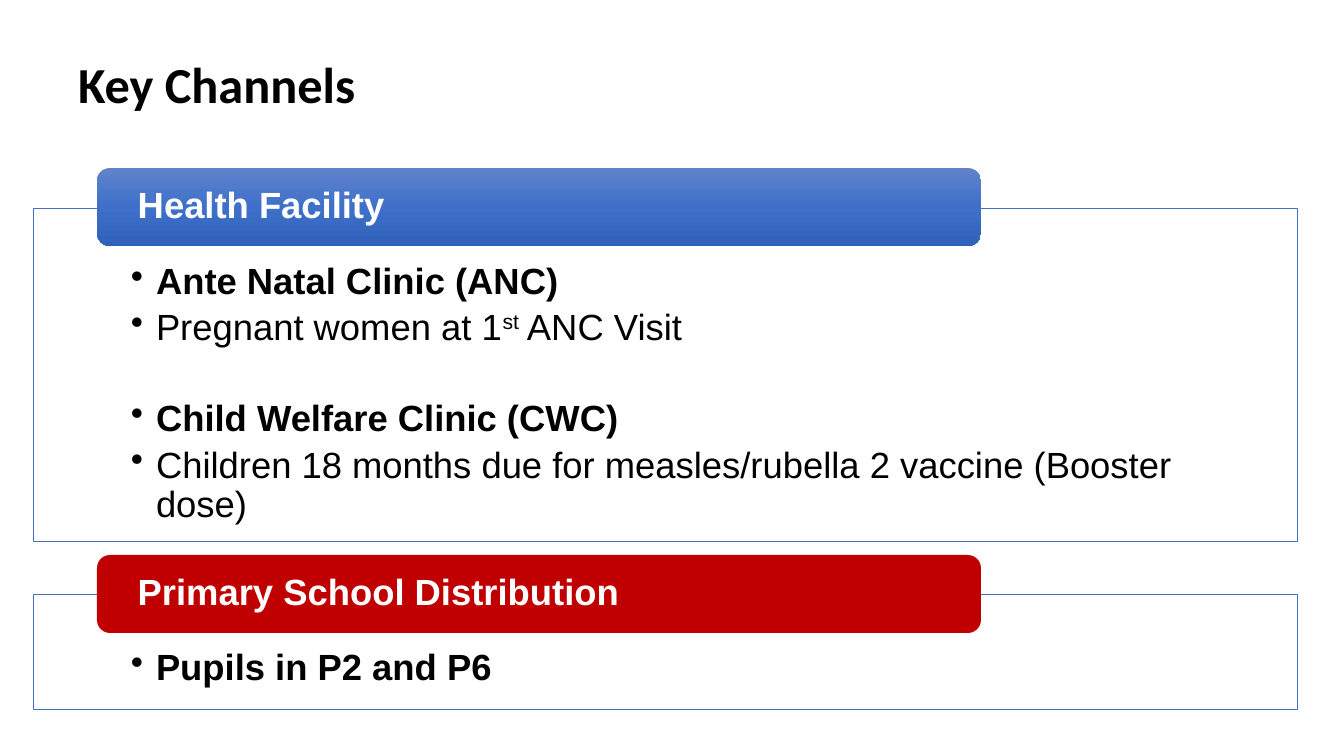
from copy import deepcopy

from lxml import etree
from pptx import Presentation
from pptx import util as u
from pptx.dml.color import RGBColor
from pptx.enum import shapes, text
from pptx.oxml.ns import qn

INK = {"black": "000000", "white": "FFFFFF", "edge": "4472C4", "red": "C00000"}
BLUES = {0: "6183CB", 0.5: "3E70CA", 1: "3062BB"}


def px(n):
    return u.Emu(round(n * 914400 / 100.8))


def rgb(name):
    return RGBColor.from_string(INK.get(name, name))


def write(para, words, size=26, face="Arial", color="black", bold=False, sup=False):
    run = para.add_run()
    run.text = words
    font = run.font
    font.size, font.name, font.bold = u.Pt(size), face, bold
    font.color.rgb = rgb(color)
    if sup:
        run._r.get_or_add_rPr().set("baseline", "30000")


class Deck:
    def __init__(self):
        self.prs = Presentation()
        self.prs.slide_width, self.prs.slide_height = px(1344), px(756)
        self.slide = self.prs.slides.add_slide(self.prs.slide_layouts[5])

    def title(self, words, box):
        shape = self.slide.shapes.title
        shape.left, shape.top, shape.width, shape.height = map(px, box)
        frame = shape.text_frame
        frame.vertical_anchor = text.MSO_ANCHOR.MIDDLE
        para = frame.paragraphs[0]
        para.alignment, para.line_spacing = text.PP_ALIGN.LEFT, 0.9
        write(para, words, size=36, face="Calibri", bold=True)

    def shape(self, kind, box, pads, anchor):
        shape = self.slide.shapes.add_shape(kind, *map(px, box))
        shape.shadow.inherit = False
        frame = shape.text_frame
        frame.word_wrap, frame.vertical_anchor = True, anchor
        (frame.margin_left, frame.margin_top,
         frame.margin_right, frame.margin_bottom) = map(px, pads)
        return shape

    def panel(self, top, height, items):
        """Draw a framed list; each item is (runs, space before in points)."""
        shape = self.shape(shapes.MSO_SHAPE.RECTANGLE, (33, top, 1264, height),
                           (98, 55, 98, 20), text.MSO_ANCHOR.TOP)
        shape.fill.solid()
        shape.fill.fore_color.rgb = rgb("white")
        fill = shape._element.spPr.find(qn("a:solidFill"))
        etree.SubElement(fill[0], qn("a:alpha")).set("val", "90000")
        shape.line.color.rgb = rgb("edge")
        shape.line.width = u.Pt(0.5)
        frame = shape.text_frame
        for i, (runs, gap) in enumerate(items):
            para = frame.add_paragraph() if i else frame.paragraphs[0]
            props = para._p.get_or_add_pPr()
            props.set("marL", str(px(25)))
            props.set("indent", str(-px(25)))
            etree.SubElement(props, qn("a:buChar")).set("char", "•")
            para.alignment, para.line_spacing = text.PP_ALIGN.LEFT, 0.9
            para.space_before, para.space_after = u.Pt(gap), u.Pt(5)
            for words, style in runs:
                write(para, words, **style)

    def header(self, top, words, color=None):
        shape = self.shape(shapes.MSO_SHAPE.ROUNDED_RECTANGLE, (97, top, 884, 78),
                           (37, 0, 37, 0), text.MSO_ANCHOR.MIDDLE)
        shape.line.fill.background()
        if color:
            shape.fill.solid()
            shape.fill.fore_color.rgb = rgb(color)
        else:
            self.blend(shape)
        para = shape.text_frame.paragraphs[0]
        para.alignment, para.line_spacing = text.PP_ALIGN.LEFT, 0.9
        write(para, words, color="white", bold=True)

    def blend(self, shape):
        """Fill the shape from top to bottom with the three blues."""
        shape.fill.gradient()
        shape.fill.gradient_angle = 270
        stops = shape._element.spPr.find(qn("a:gradFill")).find(qn("a:gsLst"))
        stops.append(deepcopy(stops[-1]))
        for stop, (pos, color) in zip(shape.fill.gradient_stops, BLUES.items()):
            stop.position = pos
            stop.color.rgb = rgb(color)


def main():
    deck = Deck()
    bold = {"bold": True}
    deck.title("Key Channels", (68, 45, 1210, 84))
    deck.panel(208, 333, [
        ([("Ante Natal Clinic (ANC)", bold)], 0),
        ([("Pregnant women at 1", {}), ("st", {"sup": True}), (" ANC Visit", {})], 0),
        ([("Child Welfare Clinic (CWC)", bold)], 32),
        ([("Children 18 months due for measles/rubella 2 vaccine (Booster dose)", {})], 0),
    ])
    deck.header(168, "Health Facility")
    deck.panel(594, 115, [([("Pupils in P2 and P6", bold)], 0)])
    deck.header(555, "Primary School Distribution", "red")
    deck.prs.save("out.pptx")


if __name__ == "__main__":
    main()
